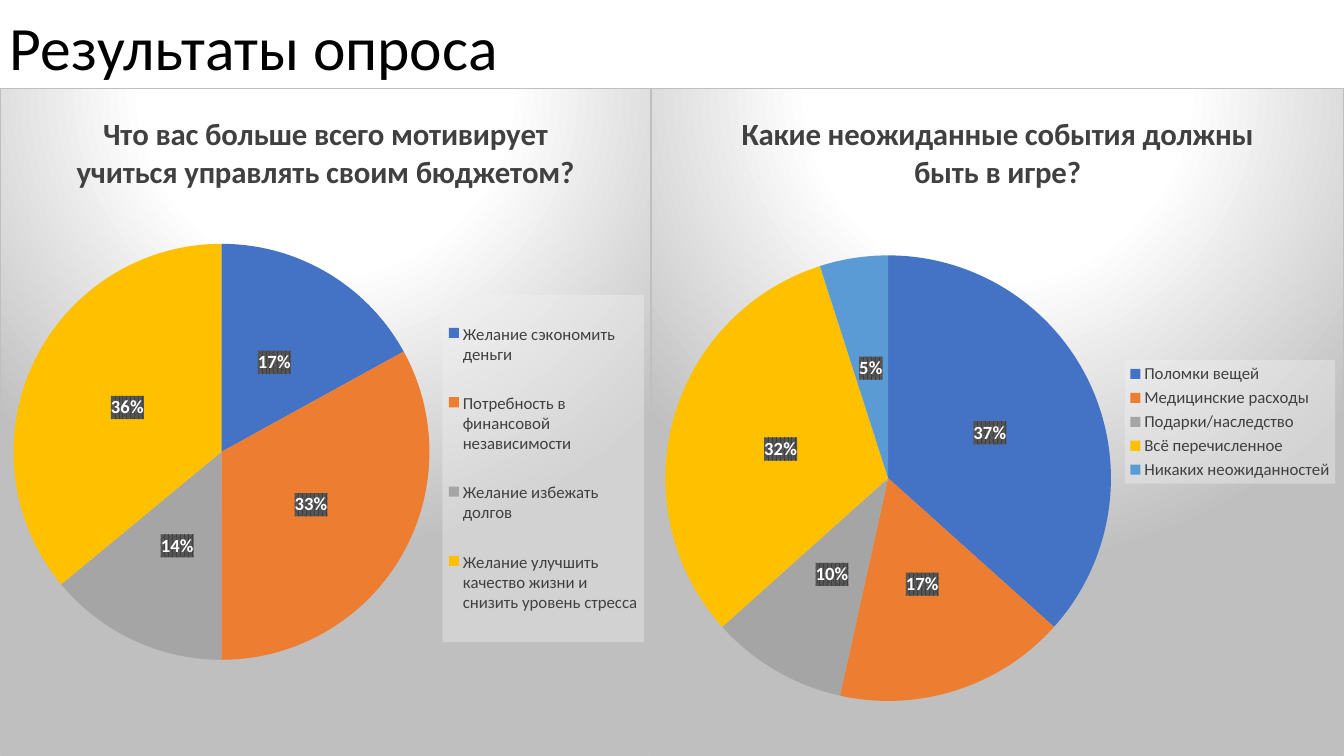
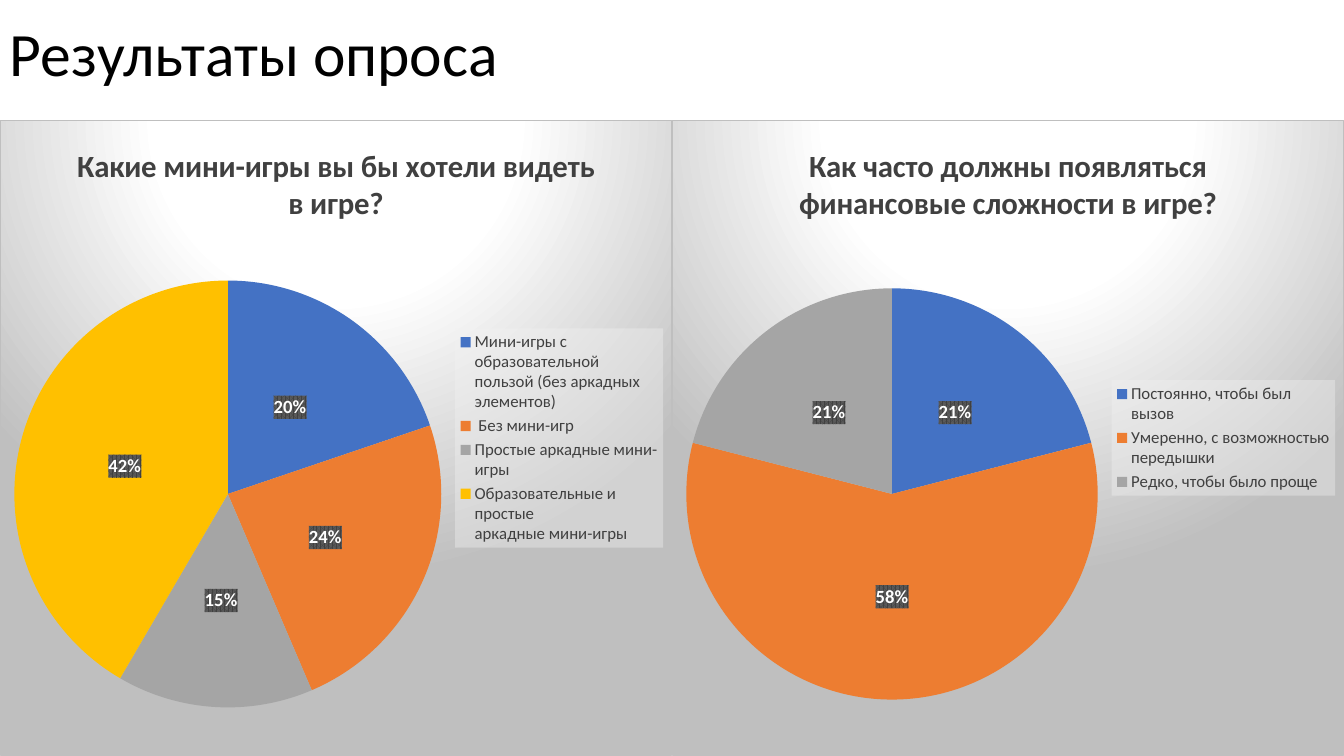
"""Build two slides of survey results, each with a pair of pie charts."""
import pptx
import pptx.chart.data
import pptx.dml.color
import pptx.enum.chart
import pptx.enum.text
import pptx.oxml
import pptx.oxml.ns
import pptx.util

Pt = pptx.util.Pt
RGB = pptx.dml.color.RGBColor.from_string
WIDE, HIGH = 960, 540
HEAD = "Результаты опроса"
COLORS = {
    "black": "000000", "white": "FFFFFF", "text": "404040", "edge": "BFBFBF",
    "weave": "595959", "pale": "F2F2F2",
}
SLICES = ["4472C4", "ED7D31", "A5A5A5", "FFC000", "5B9BD5"]
FONTS = {
    "head": {"name": "Calibri", "size": Pt(44), "bold": False, "color": "black"},
    "base": {"name": "Calibri", "size": Pt(10), "bold": False, "color": "black"},
    "title": {"name": "Calibri", "size": Pt(22), "bold": True, "color": "text"},
    "key": {"name": "Calibri", "size": Pt(12), "bold": False, "color": "text"},
    "label": {"name": "Calibri", "size": Pt(13.3), "bold": True, "color": "white"},
}
LABELS = {
    "show_percentage": True, "show_value": False, "number_format": "0%",
    "number_format_is_linked": False,
    "position": pptx.enum.chart.XL_LABEL_POSITION.CENTER,
}
KEY = {
    "position": pptx.enum.chart.XL_LEGEND_POSITION.RIGHT,
    "include_in_layout": False,
}
FILLS = {
    "chart": """<a:gradFill><a:gsLst>
        <a:gs pos="0"><a:srgbClr val="{white}"/></a:gs>
        <a:gs pos="39000"><a:srgbClr val="{white}"/></a:gs>
        <a:gs pos="100000"><a:srgbClr val="{edge}"/></a:gs></a:gsLst>
        <a:path path="circle"><a:fillToRect l="50000" t="-80000" r="50000" b="180000"/></a:path>
        </a:gradFill><a:ln w="9525"><a:solidFill><a:srgbClr val="{edge}"/></a:solidFill></a:ln>""",
    "key": """<a:solidFill><a:srgbClr val="{pale}"><a:alpha val="39000"/></a:srgbClr>
        </a:solidFill><a:ln><a:noFill/></a:ln>""",
    "label": """<a:pattFill prst="pct75"><a:fgClr><a:srgbClr val="{text}"/></a:fgClr>
        <a:bgClr><a:srgbClr val="{weave}"/></a:bgClr></a:pattFill><a:ln><a:noFill/></a:ln>""",
}
SLIDES = [
    {"head": -16, "top": 62.64, "split": 465, "pies": [
        {"title": "Что вас больше всего мотивирует учиться управлять своим бюджетом?",
         "parts": {"Желание сэкономить деньги": 17,
                   "Потребность в финансовой\nнезависимости": 33,
                   "Желание избежать долгов": 14,
                   "Желание улучшить качество жизни и\nснизить уровень стресса": 36},
         "plot": (0.02, 0.23, 0.64, 0.63), "key": (0.68, 0.31, 0.31, 0.52)},
        {"title": "Какие неожиданные события должны быть в игре?",
         "parts": {"Поломки вещей": 37, "Медицинские расходы": 17,
                   "Подарки/наследство": 10, "Всё перечисленное": 32,
                   "Никаких неожиданностей": 5}},
    ]},
    {"head": -12, "top": 85.68, "split": 480, "pies": [
        {"title": "Какие мини-игры вы бы хотели видеть в игре?",
         "parts": {"Мини-игры с образовательной\nпользой (без аркадных элементов)": 20,
                   " Без мини-игр": 24,
                   "Простые аркадные мини-игры": 15,
                   "Образовательные и простые\nаркадные мини-игры": 42}},
        {"title": "Как часто должны появляться финансовые сложности в игре?",
         "parts": {"Постоянно, чтобы был вызов": 21,
                   "Умеренно, с возможностью\nпередышки": 58,
                   "Редко, чтобы было проще": 21}},
    ]},
]


def style(font, kind):
    for key, val in FONTS[kind].items():
        if key == "color":
            font.color.rgb = RGB(COLORS[val])
        else:
            setattr(font, key, val)


def make(tag, body):
    space = pptx.oxml.ns.nsdecls("c", "a")
    return pptx.oxml.parse_xml(f"<c:{tag} {space}>{body}</c:{tag}>")


deck = pptx.Presentation()
deck.slide_width, deck.slide_height = Pt(WIDE), Pt(HIGH)

for page in SLIDES:
    slide = deck.slides.add_slide(deck.slide_layouts[6])
    frame = slide.shapes.add_textbox(0, Pt(page["head"]), Pt(828), Pt(104.4)).text_frame
    frame.word_wrap = True
    frame.vertical_anchor = pptx.enum.text.MSO_ANCHOR.MIDDLE
    line = frame.paragraphs[0]
    line.line_spacing = 0.9
    run = line.add_run()
    run.text = HEAD
    style(run.font, "head")

    edges = [0, page["split"], WIDE]
    for pie, left, right in zip(page["pies"], edges, edges[1:]):
        data = pptx.chart.data.ChartData()
        data.categories = list(pie["parts"])
        data.add_series(pie["title"], list(pie["parts"].values()))
        chart = slide.shapes.add_chart(
            pptx.enum.chart.XL_CHART_TYPE.PIE, Pt(left), Pt(page["top"]),
            Pt(right - left), Pt(HIGH - page["top"]), data).chart
        style(chart.font, "base")

        chart.has_title = True
        run = chart.chart_title.text_frame.paragraphs[0].add_run()
        run.text = pie["title"]
        style(run.font, "title")

        plot = chart.plots[0]
        plot.vary_by_categories = True
        for spot, color in enumerate(SLICES[:len(pie["parts"])]):
            look = plot.series[0].points[spot].format
            look.fill.solid()
            look.fill.fore_color.rgb = RGB(color)
            look.line.fill.background()

        chart.has_legend = True
        plot.has_data_labels = True
        for part, facts in ((chart.legend, KEY), (plot.data_labels, LABELS)):
            for key, val in facts.items():
                setattr(part, key, val)
        style(chart.legend.font, "key")
        style(plot.data_labels.font, "label")

        nodes = {"chart": chart._chartSpace, "key": chart.legend._element,
                 "label": plot.data_labels._element}
        for kind, node in nodes.items():
            shade = make("spPr", FILLS[kind].format(**COLORS))
            node.find(pptx.oxml.ns.qn("c:txPr")).addprevious(shade)

        area = chart._chartSpace.chart.plotArea
        for kind, node in (("plot", area), ("key", nodes["key"])):
            if kind not in pie:
                continue
            for old in node.findall(pptx.oxml.ns.qn("c:layout")):
                node.remove(old)
            body = '<c:layoutTarget val="inner"/>' if kind == "plot" else ""
            body += '<c:xMode val="edge"/><c:yMode val="edge"/>'
            body += "".join(f'<c:{side} val="{val}"/>' for side, val in zip("xywh", pie[kind]))
            spot = 0 if kind == "plot" else 1
            node.insert(spot, make("layout", f"<c:manualLayout>{body}</c:manualLayout>"))

deck.save("out.pptx")
